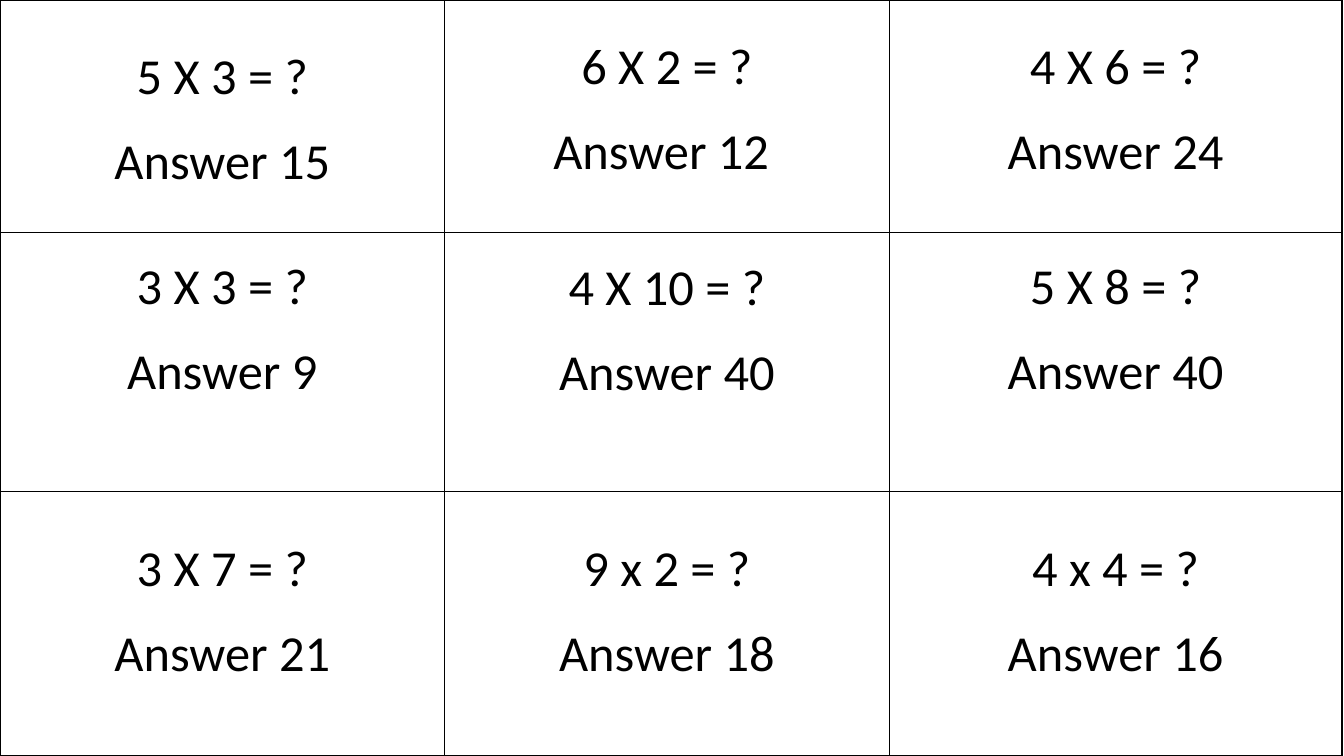
from dataclasses import dataclass

from lxml import etree
from pptx import Presentation
from pptx import util as u
from pptx.dml.color import RGBColor
from pptx.enum import text
from pptx.oxml import ns

INK = "000000"
PAPER = "FFFFFF"
COLUMN_WIDTHS = (4.41, 4.41, 4.49)
ROW_HEIGHTS = (2.31, 2.57, 2.62)
FONT_FORMAT = {"name": "Calibri", "size": u.Pt(36), "bold": False}
TABLE_FORMAT = {"first_row": False, "horz_banding": False}
ANSWER_GAP = u.Pt(17)
BORDER_WIDTH = u.Pt(1)


@dataclass(frozen=True)
class Flashcard:
    question: str
    answer: str
    top_margin: float


FLASHCARDS = (
    (Flashcard("5 X 3 = ?", "Answer 15", 0.46),
     Flashcard("6 X 2 = ?", "Answer 12 ", 0.36),
     Flashcard("4 X 6 = ?", "Answer 24", 0.36)),
    (Flashcard("3 X 3 = ?", "Answer 9", 0.23),
     Flashcard("4 X 10 = ?", "Answer 40", 0.24),
     Flashcard("5 X 8 = ?", "Answer 40", 0.23)),
    (Flashcard("3 X 7 = ?", "Answer 21", 0.46),
     Flashcard("9 x 2 = ?", "Answer 18", 0.46),
     Flashcard("4 x 4 = ?", "Answer 16", 0.46)),
)


def set_color(color_format, value: str) -> None:
    color_format.rgb = RGBColor.from_string(value)


def set_attributes(target, values: dict) -> None:
    for name, value in values.items():
        setattr(target, name, value)


def add_borders(cell) -> None:
    properties = cell._tc.get_or_add_tcPr()
    for side in ("lnL", "lnR", "lnT", "lnB"):
        line = etree.SubElement(properties, ns.qn(f"a:{side}"), w=str(BORDER_WIDTH))
        fill = etree.SubElement(line, ns.qn("a:solidFill"))
        etree.SubElement(fill, ns.qn("a:srgbClr"), val=INK)


def fill_cell(cell, card: Flashcard) -> None:
    add_borders(cell)
    cell.fill.solid()
    set_color(cell.fill.fore_color, PAPER)
    cell.margin_top = u.Inches(card.top_margin)

    # Question above, answer below
    frame = cell.text_frame
    frame.text = f"{card.question}\n{card.answer}"
    for paragraph in frame.paragraphs:
        paragraph.alignment = text.PP_ALIGN.CENTER
        for run in paragraph.runs:
            set_attributes(run.font, FONT_FORMAT)
            set_color(run.font.color, INK)
    frame.paragraphs[1].space_before = ANSWER_GAP


def add_flashcard_table(slide) -> None:
    table = slide.shapes.add_table(
        len(ROW_HEIGHTS), len(COLUMN_WIDTHS), 0, 0,
        u.Inches(sum(COLUMN_WIDTHS)), u.Inches(sum(ROW_HEIGHTS)),
    ).table
    set_attributes(table, TABLE_FORMAT)
    for column, width in zip(table.columns, COLUMN_WIDTHS):
        column.width = u.Inches(width)
    for row, height, cards in zip(table.rows, ROW_HEIGHTS, FLASHCARDS):
        row.height = u.Inches(height)
        for cell, card in zip(row.cells, cards):
            fill_cell(cell, card)


def main() -> None:
    presentation = Presentation()
    presentation.slide_width = u.Inches(13.33)
    presentation.slide_height = u.Inches(7.5)
    slide = presentation.slides.add_slide(presentation.slide_layouts[6])
    add_flashcard_table(slide)
    presentation.save("out.pptx")


if __name__ == "__main__":
    main()
